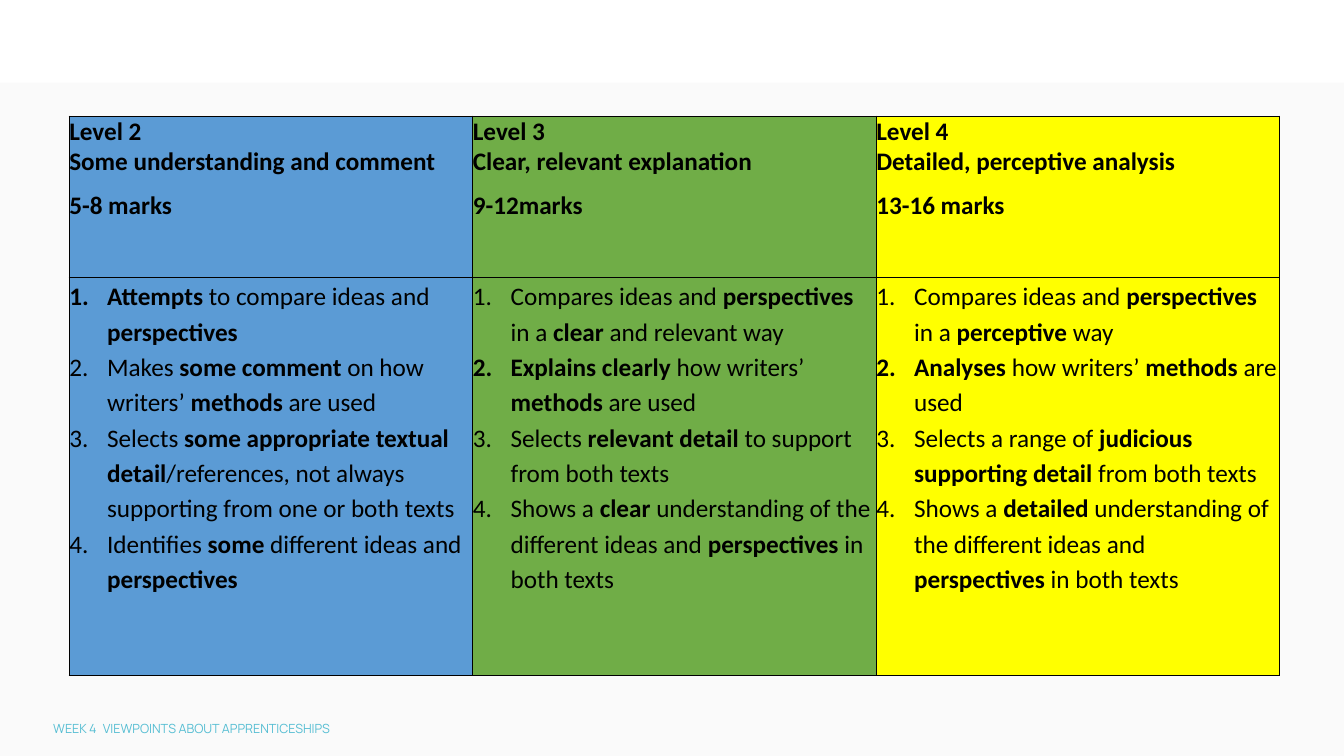
from lxml import etree
from pptx import Presentation
from pptx.dml.color import RGBColor
from pptx.enum.shapes import MSO_SHAPE
from pptx.oxml.ns import qn
from pptx.util import Pt

RECTANGLE = MSO_SHAPE.RECTANGLE
BLACK = RGBColor(0x00, 0x00, 0x00)
PALE_GREY = RGBColor(0xFA, 0xFA, 0xFA)
TEAL = RGBColor(0x57, 0xBE, 0xD3)
BLUE = RGBColor(0x5B, 0x9B, 0xD5)
GREEN = RGBColor(0x70, 0xAD, 0x47)
YELLOW = RGBColor(0xFF, 0xFF, 0x00)

LEVELS = [
    (BLUE, ["Level 2", "Some understanding and comment", "5-8 marks"], [
        "*Attempts* to compare ideas and *perspectives*",
        "Makes *some comment *on how writers’ *methods* are used",
        "Selects *some appropriate textual detail*/references, "
        "not always supporting from one or both texts",
        "Identifies *some* different ideas and *perspectives*"]),
    (GREEN, ["Level 3", "Clear, relevant explanation", "9-12marks"], [
        "Compares ideas and *perspectives* in a *clear* and relevant way",
        "*Explains clearly *how writers’ *methods* are used",
        "Selects *relevant detail *to support from both texts",
        "Shows a *clear* understanding of the different ideas and "
        "*perspectives* in both texts"]),
    (YELLOW, ["Level 4", "Detailed, perceptive analysis", "13-16 marks"], [
        "Compares ideas and *perspectives* in a *perceptive* way",
        "*Analyses* how writers’ *methods* are used",
        "Selects a range of *judicious supporting detail *from both texts",
        "Shows a *detailed* understanding of the different ideas and "
        "*perspectives* in both texts"]),
]


class SlideBuilder:
    """Draws the elements of a slide in one shared style."""

    def __init__(self, slide):
        self.slide = slide
        self.font_name = "Calibri"
        self.font_size = 18
        self.line_spacing = 1.15
        self.number_indent = 27

    def panel(self, left, top, width, height, color):
        shape = self.slide.shapes.add_shape(
            RECTANGLE, Pt(left), Pt(top), Pt(width), Pt(height))
        shape.shadow.inherit = False
        shape.fill.solid()
        shape.fill.fore_color.rgb = color
        shape.line.fill.background()

    def footer(self, left, top, width, height, text, tab, color):
        box = self.slide.shapes.add_textbox(
            Pt(left), Pt(top), Pt(width), Pt(height))
        frame = box.text_frame
        frame.word_wrap = True
        self.clear_margins(frame)
        frame.text = text
        paragraph = frame.paragraphs[0]
        properties = paragraph._p.get_or_add_pPr()
        tabs = etree.SubElement(properties, qn("a:tabLst"))
        etree.SubElement(tabs, qn("a:tab"), pos=str(Pt(tab)), algn="l")
        font = paragraph.runs[0].font
        font.name, font.size, font.color.rgb = "Manrope", Pt(9), color

    def table(self, left, top, column_width, row_heights, levels):
        frame = self.slide.shapes.add_table(
            len(row_heights), len(levels), Pt(left), Pt(top),
            Pt(column_width * len(levels)), Pt(sum(row_heights)))
        table = frame.table
        table.first_row = table.horz_banding = False
        for row, height in zip(table.rows, row_heights):
            row.height = Pt(height)
        for index, (color, heading, criteria) in enumerate(levels):
            table.columns[index].width = Pt(column_width)
            self.heading(self.cell(table, 0, index, color), heading)
            self.criteria(self.cell(table, 1, index, color), criteria)

    def cell(self, table, row, column, color):
        cell = table.cell(row, column)
        self.clear_margins(cell)
        properties = cell._tc.get_or_add_tcPr()
        for side in ("a:lnL", "a:lnR", "a:lnT", "a:lnB"):
            line = etree.SubElement(properties, qn(side), w=str(Pt(1)))
            fill = etree.SubElement(line, qn("a:solidFill"))
            etree.SubElement(fill, qn("a:srgbClr"), val=str(BLACK))
        cell.fill.solid()
        cell.fill.fore_color.rgb = color
        return cell

    def heading(self, cell, lines):
        cell.text_frame.text = "\n".join(lines)
        for paragraph in cell.text_frame.paragraphs:
            self.format_run(paragraph.runs[0], True)
        paragraph.line_spacing = self.line_spacing
        paragraph.space_before = Pt(6)

    def criteria(self, cell, criteria):
        frame = cell.text_frame
        for index, text in enumerate(criteria):
            paragraph = frame.add_paragraph() if index else frame.paragraphs[0]
            properties = paragraph._p.get_or_add_pPr()
            properties.set("marL", str(Pt(self.number_indent)))
            properties.set("indent", str(-Pt(self.number_indent)))
            etree.SubElement(
                properties, qn("a:buAutoNum"), type="arabicPeriod")
            paragraph.line_spacing = self.line_spacing
            for position, part in enumerate(text.split("*")):
                if part:
                    run = paragraph.add_run()
                    run.text = part
                    self.format_run(run, position % 2 == 1)

    def format_run(self, run, bold):
        run.font.name = self.font_name
        run.font.size = Pt(self.font_size)
        run.font.bold = bold
        run.font.color.rgb = BLACK

    def clear_margins(self, holder):
        holder.margin_left = holder.margin_right = 0
        holder.margin_top = holder.margin_bottom = 0


def main():
    presentation = Presentation()
    presentation.slide_width = Pt(960)
    presentation.slide_height = Pt(540)
    slide = presentation.slides.add_slide(presentation.slide_layouts[6])
    builder = SlideBuilder(slide)
    builder.panel(0, 59, 960, 481, PALE_GREY)
    builder.footer(38, 514.8, 284, 10,
                   "WEEK 4\tVIEWPOINTS ABOUT APPRENTICESHIPS", 35.5, TEAL)
    builder.table(49.5, 83, 288.25, [115, 284.5], LEVELS)
    presentation.save("out.pptx")


if __name__ == "__main__":
    main()
